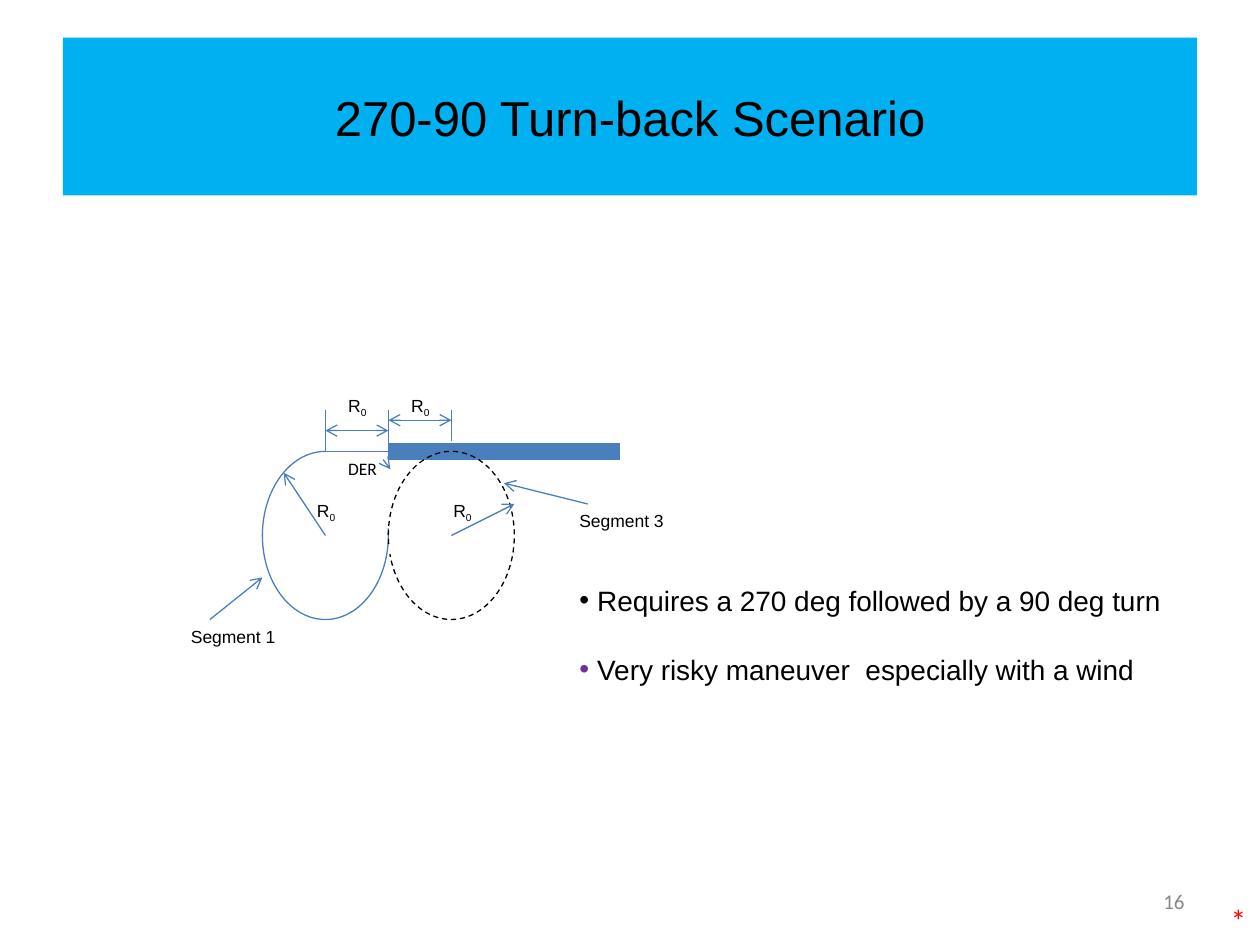
from lxml import etree
from pptx import Presentation
from pptx.dml.color import RGBColor
from pptx.enum import dml, shapes, text
from pptx.oxml import ns
from pptx.util import Cm, Pt

BLACK = RGBColor(0, 0, 0)
SKY = RGBColor(0x00, 0xB0, 0xF0)
BLUE = RGBColor(0x4B, 0x7E, 0xBC)
PURPLE = RGBColor(0x70, 0x30, 0xA0)
GREY = RGBColor(0x89, 0x89, 0x89)
RED = RGBColor(0xFF, 0, 0)

RADIUS, TURN_HEIGHT = 1.27, 3.39
DER_X, RUNWAY_Y, RUNWAY_END = 7.83, 9.1, 12.5
LEFT_X, RIGHT_X = DER_X - RADIUS, DER_X + RADIUS
CENTRE_Y = RUNWAY_Y + TURN_HEIGHT / 2
TICK_TOP = 8.26

TITLE = "270-90 Turn-back Scenario"
RADIUS_LABEL = ("R", "0")
LABELS = [
    (RADIUS_LABEL, 6.14, 9.95, 0.91, "Arial"),
    (RADIUS_LABEL, 6.77, 7.83, 0.91, "Arial"),
    (RADIUS_LABEL, 8.89, 9.95, 0.91, "Arial"),
    (RADIUS_LABEL, 8.04, 7.83, 0.91, "Arial"),
    (("DER",), 6.77, 9.1, 1.09, "Calibri"),
    (("Segment 1",), 3.6, 12.49, 2.24, "Arial"),
    (("Segment 3",), 11.43, 10.16, 2.24, "Arial"),
]
BULLETS = [
    ("Requires a 270 deg followed by a 90 deg turn", BLACK),
    ("Very risky maneuver  especially with a wind", PURPLE),
]
TURNS = [
    (LEFT_X, (162, 111.87), True, BLUE, None),
    (RIGHT_X, (103.3, 97.88), False, BLACK, dml.MSO_LINE.DASH),
]
PLAIN_LINES = [
    (LEFT_X, RUNWAY_Y, DER_X, RUNWAY_Y),
    (LEFT_X, RUNWAY_Y, LEFT_X, TICK_TOP),
    (DER_X, RUNWAY_Y, DER_X, TICK_TOP),
    (RIGHT_X, 8.89, RIGHT_X, TICK_TOP),
]
ARROWS = [
    (LEFT_X, CENTRE_Y, 5.72, 9.53),
    (RIGHT_X, CENTRE_Y, RIGHT_X + RADIUS, 10.16),
    (4.23, 12.49, 5.29, 11.64),
    (11.85, 10.16, 10.16, 9.74),
    (7.84, 9.42, 7.87, 9.46),
]
DIMENSIONS = [(LEFT_X, DER_X, 8.68), (DER_X, RIGHT_X, 8.47)]


def apply(target, **values):
    for name, value in values.items():
        setattr(target, name, value)


def add_span(para, words, size, font, colour):
    span = para.add_run()
    span.text = words
    apply(span.font, size=Pt(size), name=font)
    span.font.color.rgb = colour
    return span


def add_box(page, left, top, width, height, **frame):
    box = page.shapes.add_textbox(Cm(left), Cm(top), Cm(width), Cm(height))
    apply(box.text_frame, **frame)
    return box.text_frame.paragraphs[0]


def add_line(page, ends, weight=0.75, arrow=False):
    line = page.shapes.add_connector(
        shapes.MSO_CONNECTOR.STRAIGHT, *(Cm(value) for value in ends))
    line.line.color.rgb = BLUE
    line.line.width = Pt(weight)
    if arrow:
        etree.SubElement(line.line._get_or_add_ln(), ns.qn("a:tailEnd"), type="arrow")
    etree.SubElement(line._element.spPr, ns.qn("a:effectLst"))


def add_turn(page, centre, angles, flipped, colour, dash):
    turn = page.shapes.add_shape(
        shapes.MSO_SHAPE.ARC, Cm(centre - RADIUS), Cm(RUNWAY_Y),
        Cm(2 * RADIUS), Cm(TURN_HEIGHT))
    turn.shadow.inherit = False
    turn.fill.background()
    for index, angle in enumerate(angles):
        turn.adjustments[index] = angle
    if flipped:
        turn._element.spPr.xfrm.set("flipH", "1")
    turn.line.color.rgb = colour
    apply(turn.line, width=Pt(0.75), dash_style=dash)


def add_bullet(para, colour):
    properties = para._p.get_or_add_pPr()
    indent = Cm(0.36)
    properties.set("marL", str(indent))
    properties.set("indent", str(-indent))
    tint = etree.SubElement(properties, ns.qn("a:buClr"))
    etree.SubElement(tint, ns.qn("a:srgbClr"), val=str(colour))
    etree.SubElement(properties, ns.qn("a:buFont"), typeface="Arial")
    etree.SubElement(properties, ns.qn("a:buChar"), char="•")


def add_title(page):
    banner = page.shapes.add_shape(
        shapes.MSO_SHAPE.RECTANGLE, Cm(1.27), Cm(0.76), Cm(22.86), Cm(3.18))
    banner.shadow.inherit = False
    banner.fill.solid()
    banner.fill.fore_color.rgb = SKY
    banner.line.fill.background()
    banner.text_frame.vertical_anchor = text.MSO_ANCHOR.MIDDLE
    para = banner.text_frame.paragraphs[0]
    para.alignment = text.PP_ALIGN.CENTER
    add_span(para, TITLE, 28, "Arial", BLACK)


def add_diagram(page):
    add_line(page, (DER_X, RUNWAY_Y, RUNWAY_END, RUNWAY_Y), weight=10)
    for turn in TURNS:
        add_turn(page, *turn)
    for ends in PLAIN_LINES:
        add_line(page, ends)
    for ends in ARROWS:
        add_line(page, ends, arrow=True)
    for left, right, height in DIMENSIONS:
        for tip in (left, right):
            add_line(page, ((left + right) / 2, height, tip, height), arrow=True)
    for parts, left, top, width, font in LABELS:
        para = add_box(page, left, top, width, 0.69, word_wrap=False)
        for index, words in enumerate(parts):
            span = add_span(para, words, 10, font, BLACK)
            if index:
                span._r.get_or_add_rPr().set("baseline", "-25000")


def add_bullets(page):
    para = add_box(page, 11.43, 11.64, 13.13, 5.05, word_wrap=True)
    frame = para._parent
    for index, (words, colour) in enumerate(BULLETS):
        if index:
            para = frame.add_paragraph()
            para.space_before = Pt(20)
        add_bullet(para, colour)
        add_span(para, words, 16, "Arial", BLACK)


def add_footer(page):
    number = add_box(page, 18.21, 17.65, 5.92, 1.02, word_wrap=True,
                     vertical_anchor=text.MSO_ANCHOR.MIDDLE)
    number.alignment = text.PP_ALIGN.RIGHT
    add_span(number, "16", 12, "Calibri", GREY)
    star = add_box(page, 24.56, 18.03, 0.84, 1.02, word_wrap=False)
    add_span(star, "*", 18, "Calibri", RED)


def main():
    deck = Presentation()
    apply(deck, slide_width=Cm(25.4), slide_height=Cm(19.05))
    page = deck.slides.add_slide(deck.slide_layouts[6])
    add_title(page)
    add_diagram(page)
    add_bullets(page)
    add_footer(page)
    deck.save("out.pptx")


if __name__ == "__main__":
    main()
